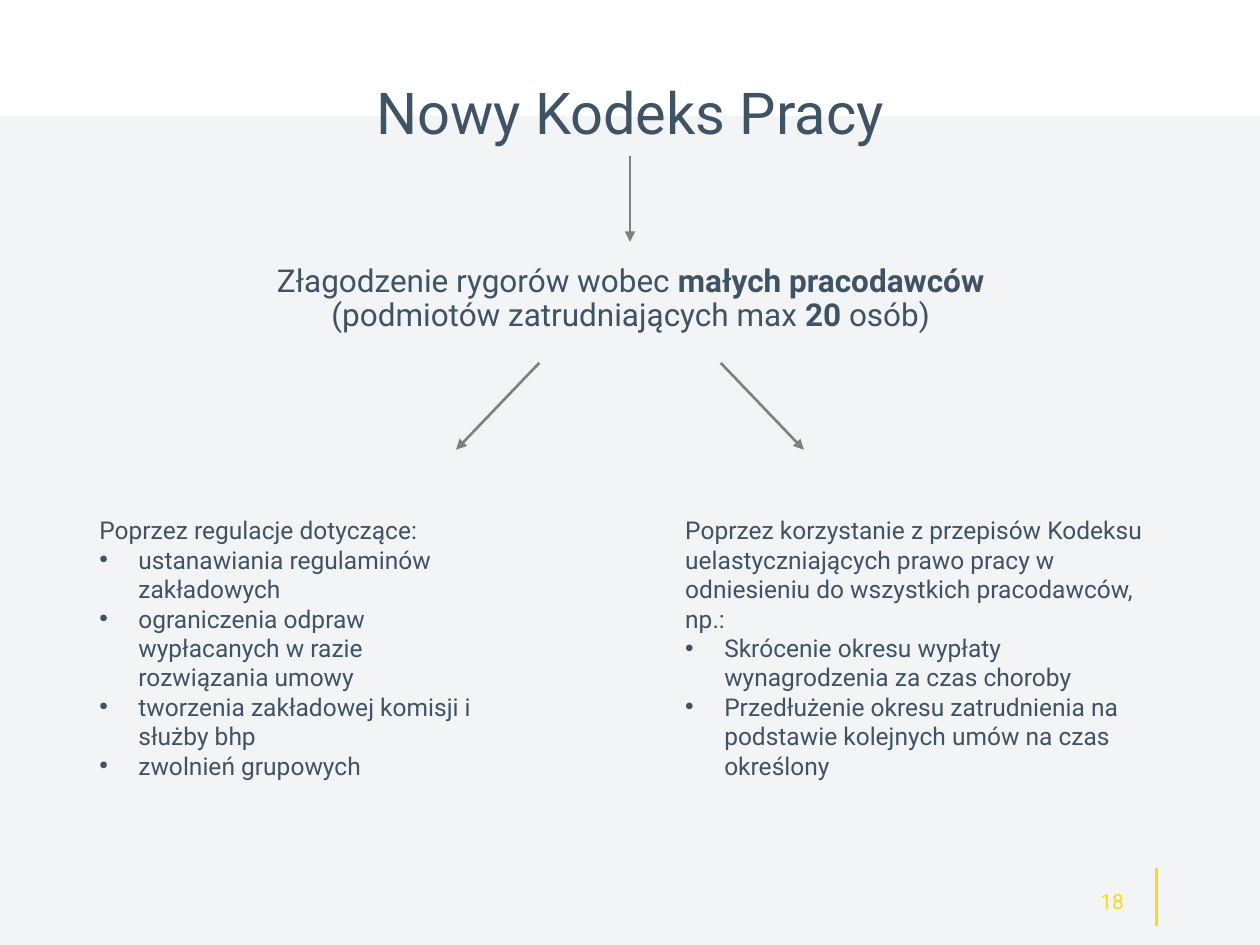
from lxml.etree import SubElement
from pptx import Presentation
from pptx.dml.color import RGBColor
from pptx.enum.shapes import MSO_CONNECTOR, MSO_SHAPE
from pptx.enum.text import MSO_ANCHOR, MSO_AUTO_SIZE, PP_ALIGN
from pptx.oxml.ns import qn
from pptx.util import Inches, Pt

COLORS = {"band": "F2F4F6", "text": "3F5364", "arrow": "808080", "accent": "FCD91D"}
FONT = "Roboto"

HEADING = "Nowy Kodeks Pracy"
SUMMARY = [
    [("Złagodzenie rygorów wobec ", False), ("małych pracodawców", True)],
    [("(podmiotów zatrudniających max ", False), ("20", True), (" osób)", False)],
]
PAGE_NUMBER = "18"
COLUMNS = [
    (0.69, 3.21, "Poprzez regulacje dotyczące:", [
        "ustanawiania regulaminów zakładowych",
        "ograniczenia odpraw wypłacanych w razie rozwiązania umowy",
        "tworzenia zakładowej komisji i służby bhp",
        "zwolnień grupowych",
    ]),
    (5.34, 3.97, "Poprzez korzystanie z przepisów Kodeksu uelastyczniających prawo pracy "
                 "w odniesieniu do wszystkich pracodawców, np.:", [
        "Skrócenie okresu wypłaty wynagrodzenia za czas choroby",
        "Przedłużenie okresu zatrudnienia na podstawie kolejnych umów na czas określony",
    ]),
]
ARROWS = [(5, 1.24, 5, 1.92), (4.28, 2.88, 3.62, 3.57), (5.72, 2.88, 6.38, 3.57)]
ACCENT_LINE = (9.18, 6.89, 9.18, 7.35)


def color(name):
    """Return the palette color with the given name."""
    return RGBColor.from_string(COLORS[name])


def format_para(para, size, align=None, tone="text", spacing=None):
    """Set the font and layout of a paragraph."""
    para.alignment = align
    para.line_spacing = spacing
    para.font.name = FONT
    para.font.size = Pt(size)
    para.font.color.rgb = color(tone)


def add_box(page, left, top, width, height, anchor=MSO_ANCHOR.MIDDLE):
    """Add a wrapping text box and return its text frame."""
    box = page.shapes.add_textbox(*map(Inches, (left, top, width, height)))
    frame = box.text_frame
    frame.word_wrap = True
    frame.vertical_anchor = anchor
    return frame


def add_line(page, points, tone, arrow=False):
    """Draw a straight line, with an arrowhead at its end if wanted."""
    line = page.shapes.add_connector(MSO_CONNECTOR.STRAIGHT, *map(Inches, points))
    line.line.color.rgb = color(tone)
    line.line.width = Pt(1.5)
    if arrow:
        SubElement(line.line._get_or_add_ln(), qn("a:tailEnd"), type="triangle")
    SubElement(line.element.spPr, qn("a:effectLst"))


def add_bullet(para):
    """Give a paragraph a hanging bullet."""
    indent = Inches(0.31)
    properties = para._p.get_or_add_pPr()
    properties.set("marL", str(indent))
    properties.set("indent", str(-indent))
    SubElement(properties, qn("a:buFont"), typeface="Arial")
    SubElement(properties, qn("a:buChar"), char="•")


def add_summary(page):
    """Fill the title placeholder with the central statement."""
    title = page.shapes.title
    title.left, title.top, title.width, title.height = map(Inches, (1.02, 1.72, 7.97, 1.31))
    frame = title.text_frame
    frame.auto_size = MSO_AUTO_SIZE.NONE
    frame.vertical_anchor = MSO_ANCHOR.MIDDLE
    para = frame.paragraphs[0]
    for index, line in enumerate(SUMMARY):
        if index:
            para.add_line_break()
        for text, bold in line:
            span = para.add_run()
            span.text = text
            span.font.bold = bold
    format_para(para, 18, PP_ALIGN.CENTER, spacing=0.9)


def add_band(page):
    """Place the pale band behind the title."""
    band = page.shapes.add_shape(MSO_SHAPE.RECTANGLE, *map(Inches, (0, 0.92, 10, 6.58)))
    band.shadow.inherit = False
    band.fill.solid()
    band.fill.fore_color.rgb = color("band")
    band.line.fill.background()
    page.shapes.title.element.addprevious(band.element)


def add_column(page, left, width, intro, items):
    """Add an introductory sentence followed by its bullets."""
    frame = add_box(page, left, 4.04, width, 2.22, MSO_ANCHOR.TOP)
    frame.auto_size = MSO_AUTO_SIZE.SHAPE_TO_FIT_TEXT
    intro_para = frame.paragraphs[0]
    intro_para.text = intro
    format_para(intro_para, 14)
    for item in items:
        para = frame.add_paragraph()
        para.text = item
        add_bullet(para)
        format_para(para, 14)


def main():
    """Build the slide and save the deck."""
    deck = Presentation()
    deck.slide_width, deck.slide_height = Inches(10), Inches(7.5)
    page = deck.slides.add_slide(deck.slide_layouts[5])
    add_band(page)
    add_line(page, ACCENT_LINE, "accent")
    add_summary(page)

    number = add_box(page, 7.06, 6.95, 1.96, 0.4).paragraphs[0]
    number.text = PAGE_NUMBER
    format_para(number, 12, PP_ALIGN.RIGHT, "accent")

    heading = add_box(page, 0.69, 0.39, 8.62, 1.06).paragraphs[0]
    heading.text = HEADING
    format_para(heading, 33, PP_ALIGN.CENTER, spacing=0.9)

    for points in ARROWS:
        add_line(page, points, "arrow", arrow=True)
    for column in COLUMNS:
        add_column(page, *column)
    deck.save("out.pptx")


if __name__ == "__main__":
    main()
